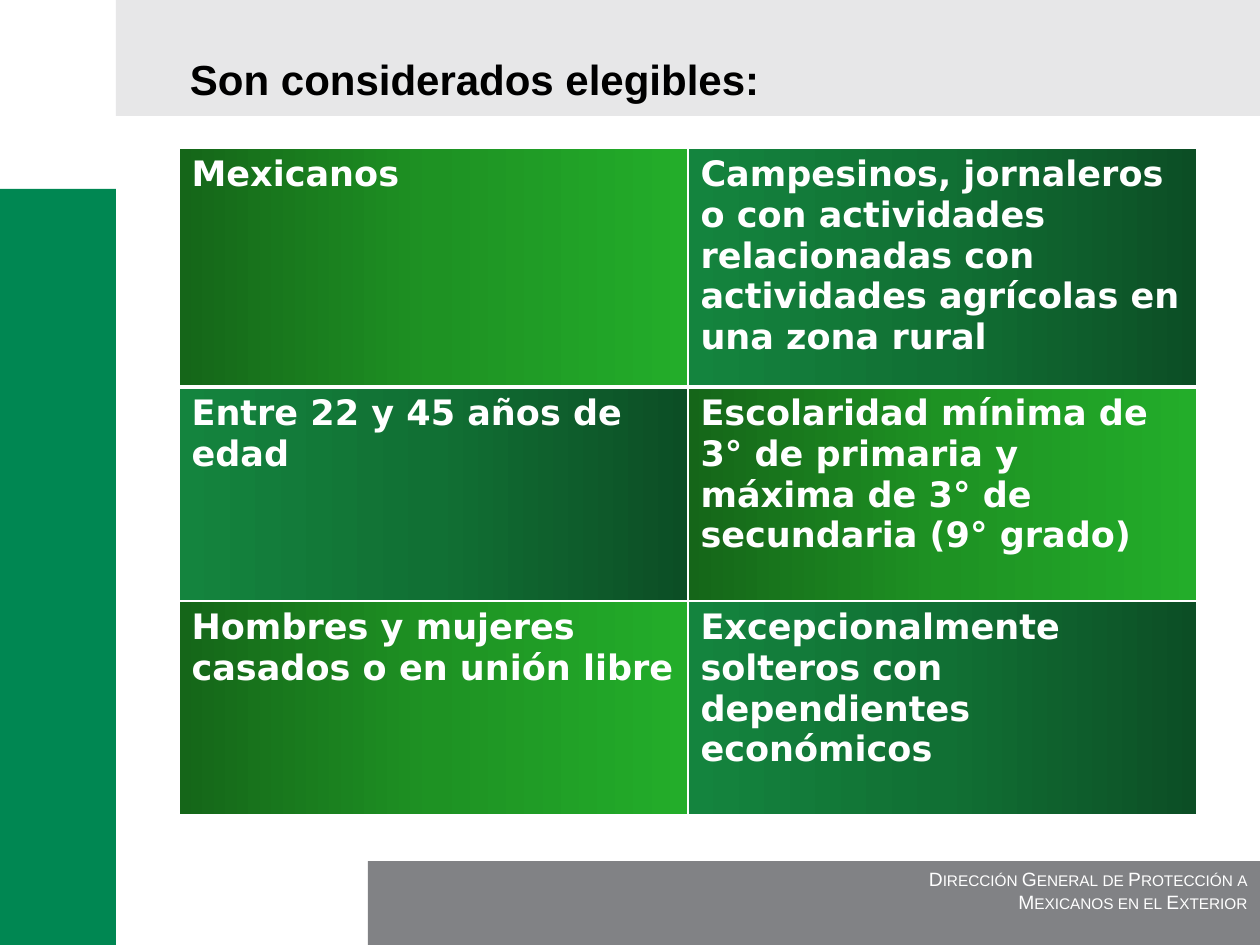
from lxml import etree
from pptx import Presentation
from pptx import util as u
from pptx.dml.color import RGBColor
from pptx.enum import shapes, text
from pptx.oxml.ns import qn

GREEN = RGBColor(0x00, 0x87, 0x52)
GRAY = RGBColor(0x81, 0x82, 0x85)
PALE = RGBColor(0xE7, 0xE7, 0xE8)
WHITE = RGBColor(0xFF, 0xFF, 0xFF)
BLACK = RGBColor(0x00, 0x00, 0x00)
LEAF = [RGBColor(0x15, 0x66, 0x19), RGBColor(0x1E, 0x92, 0x23), RGBColor(0x23, 0xAD, 0x2A)]
PINE = [RGBColor(0x14, 0x84, 0x3E), RGBColor(0x11, 0x70, 0x34), RGBColor(0x0C, 0x4E, 0x25)]

ROWS = [
    ("Mexicanos",
     "Campesinos, jornaleros o con actividades relacionadas con actividades agrícolas en una zona rural"),
    ("Entre 22 y 45 años de edad",
     "Escolaridad mínima de 3° de primaria y máxima de 3° de secundaria (9° grado)"),
    ("Hombres y mujeres casados o en unión libre",
     "Excepcionalmente solteros con dependientes económicos"),
]


def px(n):
    return u.Inches(n / 126)


def write(frame, lines, size, color, font="Arial", bold=False, caps=False,
          align=text.PP_ALIGN.LEFT):
    frame.word_wrap = True
    frame.vertical_anchor = text.MSO_ANCHOR.TOP
    for i, line in enumerate(lines):
        para = frame.paragraphs[0] if i == 0 else frame.add_paragraph()
        para.alignment = align
        para.space_before = u.Pt(0)
        run = para.add_run()
        run.text = line
        run.font.name = font
        run.font.size = u.Pt(size)
        run.font.bold = bold
        run.font.color.rgb = color
        if caps:
            run.font._element.set("cap", "small")


def add_fill(node, color):
    fill = etree.SubElement(node, qn("a:solidFill"))
    etree.SubElement(fill, qn("a:srgbClr"), val=str(color))


def paint(cell, stops, foot):
    """Give a cell white borders, the lower one foot points wide, and a left-to-right gradient."""
    props = cell._tc.get_or_add_tcPr()
    for side in "LRTB":
        wide = foot if side == "B" else 1
        add_fill(etree.SubElement(props, qn("a:ln" + side), w=str(u.Pt(wide))), WHITE)
    grad = etree.SubElement(props, qn("a:gradFill"), rotWithShape="1")
    group = etree.SubElement(grad, qn("a:gsLst"))
    for i, color in enumerate(stops):
        stop = etree.SubElement(group, qn("a:gs"), pos=str(i * 50000))
        etree.SubElement(stop, qn("a:srgbClr"), val=str(color))
    etree.SubElement(grad, qn("a:lin"), ang="0", scaled="0")


class Deck:
    def __init__(self):
        self.prs = Presentation()
        self.prs.slide_width, self.prs.slide_height = px(1260), px(945)
        self.slide = self.prs.slides.add_slide(self.prs.slide_layouts[5])

    def bar(self, x, y, w, h, color):
        shape = self.slide.shapes.add_shape(
            shapes.MSO_SHAPE.RECTANGLE, px(x), px(y), px(w), px(h))
        shape.shadow.inherit = False
        shape.fill.solid()
        shape.fill.fore_color.rgb = color
        shape.line.fill.background()
        return shape

    def title(self, x, y, w, h, line):
        shape = self.slide.shapes.title
        shape.left, shape.top, shape.width, shape.height = px(x), px(y), px(w), px(h)
        # Bring the title in front of the bars
        self.slide.shapes._spTree.append(shape._element)
        frame = shape.text_frame
        frame.auto_size = text.MSO_AUTO_SIZE.NONE
        frame.margin_left, frame.margin_top = px(74), px(11)
        write(frame, [line], 24, BLACK, bold=True, align=text.PP_ALIGN.JUSTIFY)

    def table(self, x, y, w, rows, highs):
        cols = len(rows[0])
        table = self.slide.shapes.add_table(
            len(rows), cols, px(x), px(y), px(w), px(sum(highs))).table
        for r, (row, high) in enumerate(zip(rows, highs)):
            table.rows[r].height = px(high)
            for c, line in enumerate(row):
                cell = table.cell(r, c)
                write(cell.text_frame, [line], 20, WHITE, font="DejaVu Sans", bold=True)
                paint(cell, PINE if (r + c) % 2 else LEAF, 3 if r == 0 else 1)


def main():
    deck = Deck()
    deck.bar(0, 189, 116, 756, GREEN)
    foot = deck.bar(368, 861, 892, 84, GRAY)
    write(foot.text_frame, ["Dirección General de Protección a", "Mexicanos en el Exterior"],
          11, WHITE, caps=True, align=text.PP_ALIGN.RIGHT)
    deck.bar(116, 0, 1144, 116, PALE)
    deck.title(116, 42, 1071, 63, "Son considerados elegibles:")
    deck.table(179, 148, 1018, ROWS, [239, 214, 214])
    deck.prs.save("out.pptx")


if __name__ == "__main__":
    main()
